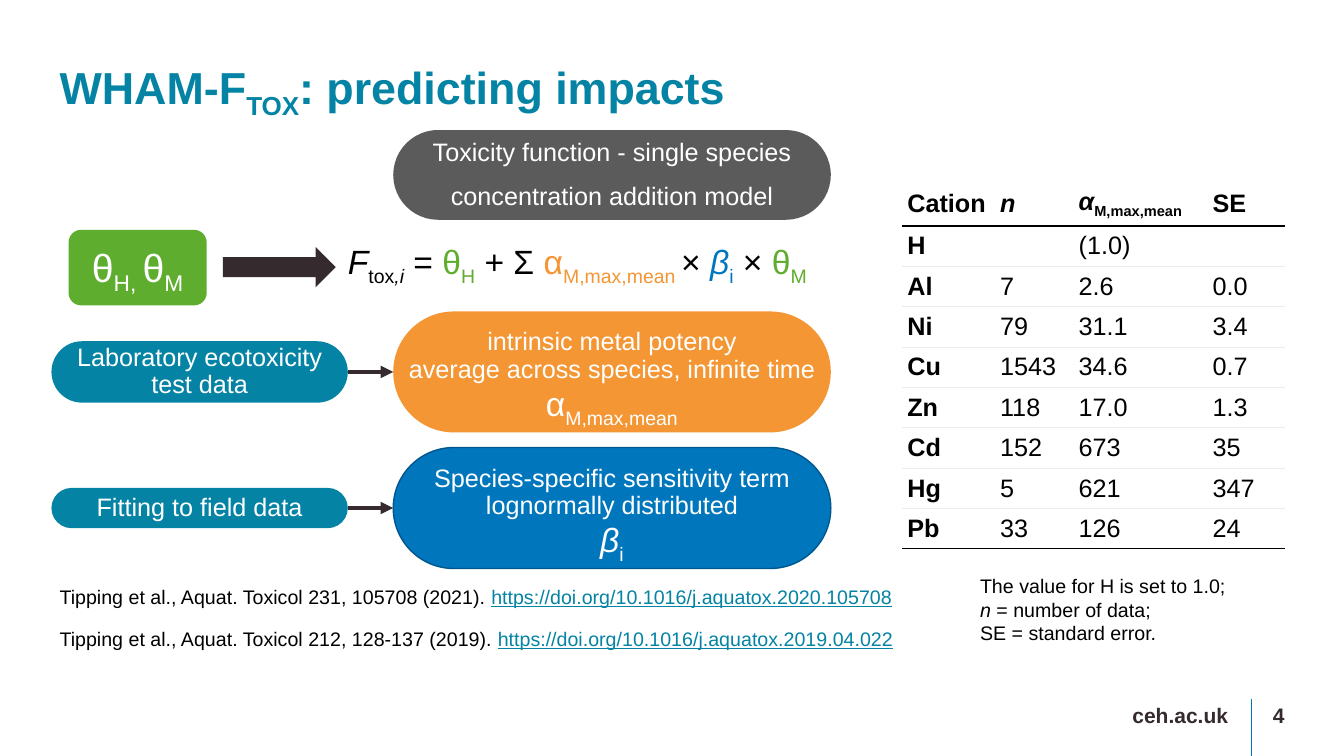
"""Build the slide on predicting toxic impacts with WHAM-FTOX."""
from lxml import etree
from pptx import Presentation
from pptx.dml.color import RGBColor
from pptx.enum.shapes import MSO_CONNECTOR, MSO_SHAPE
from pptx.enum.text import MSO_ANCHOR, PP_ALIGN
from pptx.oxml.ns import qn
from pptx.util import Inches, Pt

STRAIGHT = MSO_CONNECTOR.STRAIGHT
ROUNDED, ARROW = MSO_SHAPE.ROUNDED_RECTANGLE, MSO_SHAPE.RIGHT_ARROW
TOP, MIDDLE = MSO_ANCHOR.TOP, MSO_ANCHOR.MIDDLE
LEFT, CENTER, RIGHT = PP_ALIGN.LEFT, PP_ALIGN.CENTER, PP_ALIGN.RIGHT

TEAL = RGBColor(0x04, 0x83, 0xA4)
DARK = RGBColor(0x35, 0x2B, 0x2F)
GREEN = RGBColor(0x5F, 0xAD, 0x2E)
GREY = RGBColor(0x5C, 0x5B, 0x5B)
ORANGE = RGBColor(0xF4, 0x96, 0x33)
BLUE = RGBColor(0x00, 0x76, 0xBD)
NAVY = RGBColor(0x00, 0x57, 0x8C)
PALE = RGBColor(0xEB, 0xEB, 0xEB)
BLACK = RGBColor(0, 0, 0)
WHITE = RGBColor(0xFF, 0xFF, 0xFF)

WIDTH, HEIGHT = Inches(13.33), Inches(7.5)
MARGIN, SOURCE_X, SOURCE_W, MODEL_X, MODEL_W = 4.43, 3.83, 22.05, 29.26, 32.56
ITALIC, SUB = {"italic": True}, {"sub": True}
SYMBOL = {"size": Pt(24)}
SYMBOL_SUB = SYMBOL | SUB
LINK = {"color": TEAL, "underline": True}

CATIONS = [
    ("H", "", "(1.0)", ""),
    ("Al", "7", "2.6", "0.0"),
    ("Ni", "79", "31.1", "3.4"),
    ("Cu", "1543", "34.6", "0.7"),
    ("Zn", "118", "17.0", "1.3"),
    ("Cd", "152", "673", "35"),
    ("Hg", "5", "621", "347"),
    ("Pb", "33", "126", "24"),
]


def col(n):
    """Return the length of n of the slide's 100 columns."""
    return round(WIDTH * n / 100)


def row(n):
    """Return the length of n of the slide's 100 rows."""
    return round(HEIGHT * n / 100)


def place(x, y, w, h):
    """Turn grid units into left, top, width and height."""
    return col(x), row(y), col(w), row(h)


def write(frame, lines, size, color, align=LEFT, spacing=0.9, gap=0, **style):
    """Fill a text frame with lines, each a string or a list of (text, format) runs."""
    for i, line in enumerate(lines):
        paragraph = frame.add_paragraph() if i else frame.paragraphs[0]
        paragraph.alignment, paragraph.line_spacing = align, spacing
        if i and gap:
            paragraph.space_before = Pt(gap)
        for text, changes in [(line, {})] if isinstance(line, str) else line:
            run = paragraph.add_run()
            run.text = text
            values = {"name": "Arial", "size": Pt(size), "color": color} | style | changes
            run.font.color.rgb = values.pop("color")
            if values.pop("sub", False):
                run._r.get_or_add_rPr().set("baseline", "-25000")
            for key, value in values.items():
                setattr(run.font, key, value)


def set_frame(frame, anchor, inset=(0, 0), wrap=True):
    """Set a frame's anchor, side and top insets and wrapping."""
    side, end = map(Inches, inset)
    values = {"margin_left": side, "margin_right": side, "margin_top": end,
              "margin_bottom": end, "vertical_anchor": anchor, "word_wrap": wrap}
    for key, value in values.items():
        setattr(frame, key, value)


def add_text(slide, area, lines, size, color, anchor=TOP, **style):
    """Add a text box without insets."""
    frame = slide.shapes.add_textbox(*place(*area)).text_frame
    set_frame(frame, anchor)
    write(frame, lines, size, color, **style)


def add_block(slide, kind, area, fill, lines=(), size=18, roundness=None,
              tight=False, outline=None, gap=0):
    """Add a filled shape with white centred text."""
    block = slide.shapes.add_shape(kind, *place(*area))
    block.shadow.inherit = False
    block.fill.solid()
    block.fill.fore_color.rgb = fill
    if outline:
        block.line.color.rgb, block.line.width = outline, Pt(1)
    else:
        block.line.fill.background()
    if roundness:
        block.adjustments[0] = roundness
    if tight:
        set_frame(block.text_frame, TOP, wrap=False)
    else:
        set_frame(block.text_frame, MIDDLE, (0.1, 0.05))
    write(block.text_frame, lines, size, WHITE, CENTER, gap=gap)
    return block


def add_line(slide, start, end, color, width):
    """Add a straight line without a shadow."""
    line = slide.shapes.add_connector(STRAIGHT, col(start[0]), row(start[1]),
                                      col(end[0]), row(end[1]))
    line.line.color.rgb, line.line.width = color, Pt(width)
    etree.SubElement(line._element.spPr, qn("a:effectLst"))
    return line


def add_stage(slide, middle, source_lines, source_height, fill, term_lines, outline=None):
    """Add a data source with an arrow to the model term it gives."""
    source = add_block(slide, ROUNDED,
                       (SOURCE_X, middle - source_height / 2, SOURCE_W, source_height),
                       TEAL, source_lines, roundness=0.5)
    term = add_block(slide, ROUNDED, (MODEL_X, middle - 8, MODEL_W, 16), fill, term_lines,
                     roundness=0.5, tight=True, outline=outline)
    link = add_line(slide, (SOURCE_X + SOURCE_W, middle), (MODEL_X, middle), DARK, 3)
    link.begin_connect(source, 3)
    link.end_connect(term, 1)
    etree.SubElement(link.line._get_or_add_ln(), qn("a:tailEnd"), type="triangle")


def set_borders(cell, above, below):
    """Draw a cell's top and bottom borders, given as (colour, points) or None."""
    properties = cell._tc.get_or_add_tcPr()
    for side, border in zip(("L", "R", "T", "B"), (None, None, above, below)):
        color, width = border or (None, 0)
        edge = etree.SubElement(properties, qn(f"a:ln{side}"), w=str(Pt(width)))
        if border:
            fill = etree.SubElement(edge, qn("a:solidFill"))
            etree.SubElement(fill, qn("a:srgbClr"), val=str(color))
        else:
            etree.SubElement(edge, qn("a:noFill"))


def add_cations(slide):
    """Add the table of cation potencies."""
    header = ["Cation", [("n", ITALIC)], [("α", ITALIC), ("M,max,mean", SUB)], "SE"]
    rows = [header, *CATIONS]
    widths, heights = (6.9, 5.85, 9.97, 5.78), [5.6] + [5.1] * len(CATIONS)
    table = slide.shapes.add_table(len(rows), len(widths),
                                   *place(67.14, 24, sum(widths), sum(heights))).table
    table.first_row = table.horz_banding = False
    strong, faint = (BLACK, 1), (PALE, 0.75)
    borders = [None, strong] + [faint] * (len(CATIONS) - 1) + [strong]
    for c, width in enumerate(widths):
        table.columns[c].width = col(width)
    for r, values in enumerate(rows):
        table.rows[r].height = row(heights[r])
        for c, value in enumerate(values):
            cell = table.cell(r, c)
            set_borders(cell, borders[r], borders[r + 1])
            cell.fill.background()
            cell.vertical_anchor = MIDDLE
            cell.margin_left = cell.margin_right = Inches(0.05)
            if value:
                write(cell.text_frame, [value], 18, BLACK, spacing=1, bold=r == 0 or c == 0)


def main():
    """Build and save the slide."""
    deck = Presentation()
    deck.slide_width, deck.slide_height = WIDTH, HEIGHT
    slide = deck.slides.add_slide(deck.slide_layouts[6])

    add_line(slide, (93.1, 92.4), (93.1, 100), BLUE, 0.25)
    add_text(slide, (MARGIN, 7.87, 91.15, 7.47),
             [[("WHAM-F", {}), ("TOX", SUB), (": predicting impacts", {})]],
             32, TEAL, MIDDLE, bold=True)
    for x, width, label in ((60.32, 31.06, "ceh.ac.uk"), (93.47, 2.1, "4")):
        add_text(slide, (x, 93.33, width, 3.6), [label], 15, DARK, align=RIGHT, bold=True)

    add_block(slide, ROUNDED, (5.1, 30.4, 10.28, 10), GREEN,
              [[("θ", {}), ("H, ", SUB), ("θ", {}), ("M", SUB)]], size=28)
    add_block(slide, ARROW, (16.58, 32.67, 8.4, 5.33), DARK)
    green, orange, blue = ({"color": c} for c in (GREEN, ORANGE, BLUE))
    equation = [("F", ITALIC), ("tox", SUB), (",i", SUB | ITALIC), (" = ", {}),
                ("θ", green), ("H", green | SUB), (" + Σ ", {}),
                ("α", orange), ("M,max,mean ", orange | SUB), ("× ", {}),
                ("β", blue | ITALIC), ("i", blue | SUB), (" × ", {}),
                ("θ", green), ("M", green | SUB)]
    add_text(slide, (25.88, 32, 37.66, 6.67), [equation], 24, BLACK)

    add_block(slide, ROUNDED, (MODEL_X, 17.2, MODEL_W, 11.87), GREY,
              ["Toxicity function - single species", "concentration addition model"],
              roundness=0.5, gap=12)
    add_stage(slide, 49.2, ["Laboratory ecotoxicity", "test data"], 8.13, ORANGE,
              ["intrinsic metal potency", "average across species, infinite time",
               [("α", SYMBOL), ("M,max,mean", SYMBOL_SUB)]])
    add_stage(slide, 67.2, ["Fitting to field data"], 5.33, BLUE,
              ["Species-specific sensitivity term", "lognormally distributed",
               [("β", SYMBOL | ITALIC), ("i", SYMBOL_SUB)]], NAVY)

    add_cations(slide)
    add_text(slide, (72.92, 75.87, 19.43, 9.47),
             ["The value for H is set to 1.0;", [("n", ITALIC), (" = number of data;", {})],
              "SE = standard error."], 14, BLACK, MIDDLE, spacing=1)
    references = [
        [("Tipping et al., Aquat. Toxicol 231, 105708 (2021). ", {}),
         ("https://doi.org/10.1016/j.aquatox.2020.105708", LINK)],
        [("Tipping et al., Aquat. Toxicol 212, 128-137 (2019). ", {}),
         ("https://doi.org/10.1016/j.aquatox.2019.04.022", LINK)],
    ]
    add_text(slide, (MARGIN, 77.73, 63.8, 9.73), references, 14, BLACK, gap=14.5)
    deck.save("out.pptx")


if __name__ == "__main__":
    main()
